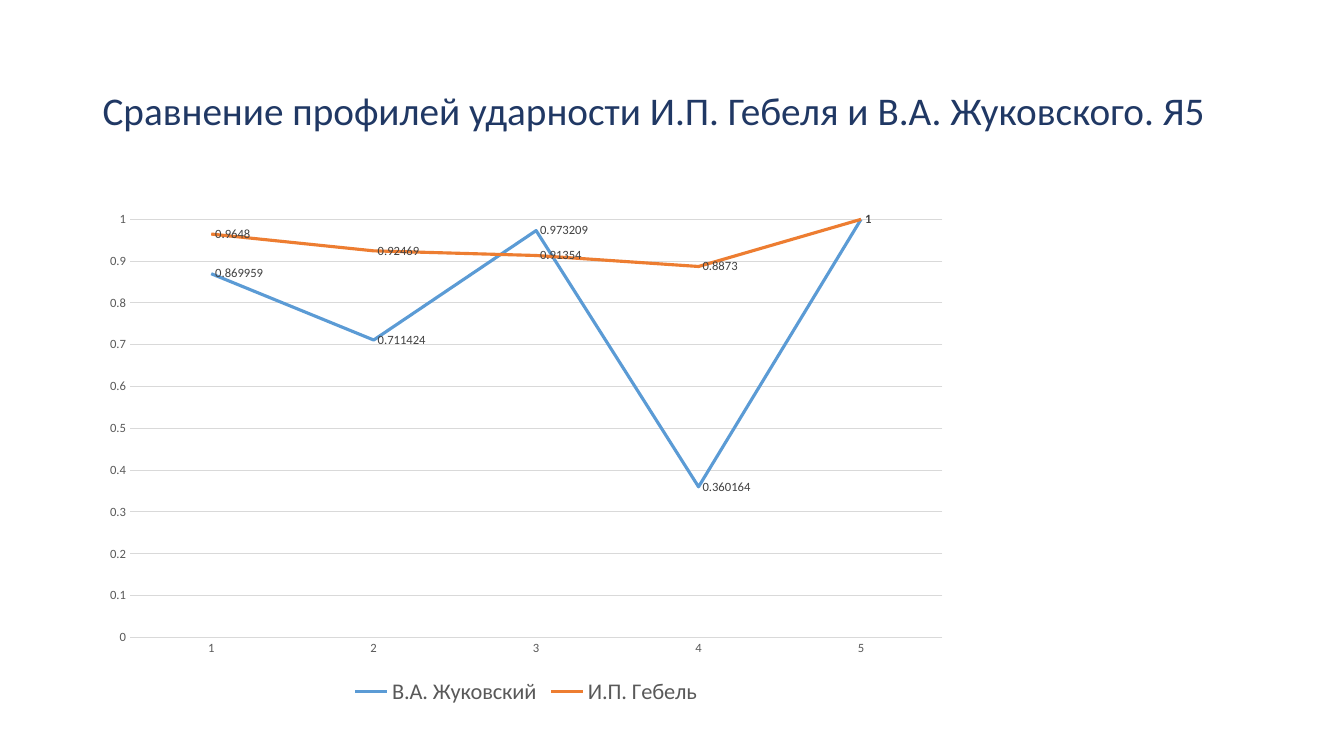
from pptx import Presentation
from pptx.chart.data import CategoryChartData
from pptx.dml.color import RGBColor
from pptx.enum.chart import XL_CHART_TYPE, XL_LABEL_POSITION, XL_LEGEND_POSITION, XL_MARKER_STYLE, XL_TICK_MARK
from pptx.enum.text import MSO_ANCHOR
from pptx.util import Inches, Pt

NAVY = RGBColor(0x20, 0x38, 0x64)
GREY = RGBColor(0x59, 0x59, 0x59)
DARK = RGBColor(0x40, 0x40, 0x40)
PALE = RGBColor(0xD9, 0xD9, 0xD9)
BLUE = RGBColor(0x5B, 0x9B, 0xD5)
ORANGE = RGBColor(0xED, 0x7D, 0x31)


def style(font, size, color):
    look = {"name": "Calibri", "size": Pt(size), "bold": False}
    for key, val in look.items():
        setattr(font, key, val)
    font.color.rgb = color


def stroke(line, width, color):
    line.width = Pt(width)
    line.color.rgb = color


deck = Presentation()
deck.slide_width = Inches(13.33)
deck.slide_height = Inches(7.5)
wide, high = deck.slide_width, deck.slide_height
slide = deck.slides.add_slide(deck.slide_layouts[6])
left = int(wide * 0.069)

box = slide.shapes.add_textbox(left, int(high * 0.053), wide - 2 * left, int(high * 0.193))
frame = box.text_frame
frame.word_wrap = True
frame.vertical_anchor = MSO_ANCHOR.MIDDLE
title = frame.paragraphs[0]
title.line_spacing = 0.9
run = title.add_run()
run.text = "Сравнение профилей ударности И.П. Гебеля и В.А. Жуковского. Я5"
style(run.font, 28, NAVY)

poets = [
    ("В.А. Жуковский", BLUE, (0.869959, 0.711424, 0.973209, 0.360164, 1)),
    ("И.П. Гебель", ORANGE, (0.9648, 0.92469, 0.91354, 0.8873, 1)),
]
data = CategoryChartData()
data.categories = [str(foot) for foot in range(1, 6)]
for name, color, vals in poets:
    data.add_series(name, vals)
chart = slide.shapes.add_chart(
    XL_CHART_TYPE.LINE, left, int(high * 0.267), int(wide * 0.645), int(high * 0.672), data
).chart
chart.has_title = False
chart.font.name = "Calibri"
chart.font.size = Pt(10)

chart.has_legend = True
legend = chart.legend
legend.position = XL_LEGEND_POSITION.BOTTOM
legend.include_in_layout = False
style(legend.font, 16, GREY)

feet, share = chart.category_axis, chart.value_axis
ticks = {"major_tick_mark": XL_TICK_MARK.NONE, "minor_tick_mark": XL_TICK_MARK.NONE}
for axis in (feet, share):
    for key, val in ticks.items():
        setattr(axis, key, val)
    style(axis.tick_labels.font, 9, GREY)
stroke(feet.format.line, 0.75, PALE)
scale = {"minimum_scale": 0, "maximum_scale": 1, "major_unit": 0.1, "has_major_gridlines": True}
for key, val in scale.items():
    setattr(share, key, val)
share.format.line.fill.background()
stroke(share.major_gridlines.format.line, 0.75, PALE)

plot = chart.plots[0]
plot.vary_by_categories = False
tags = {"show_value": True, "position": XL_LABEL_POSITION.RIGHT}
for series, (name, color, vals) in zip(plot.series, poets):
    series.smooth = False
    series.marker.style = XL_MARKER_STYLE.NONE
    stroke(series.format.line, 2.25, color)
    for key, val in tags.items():
        setattr(series.data_labels, key, val)
    style(series.data_labels.font, 9, DARK)

deck.save("out.pptx")
